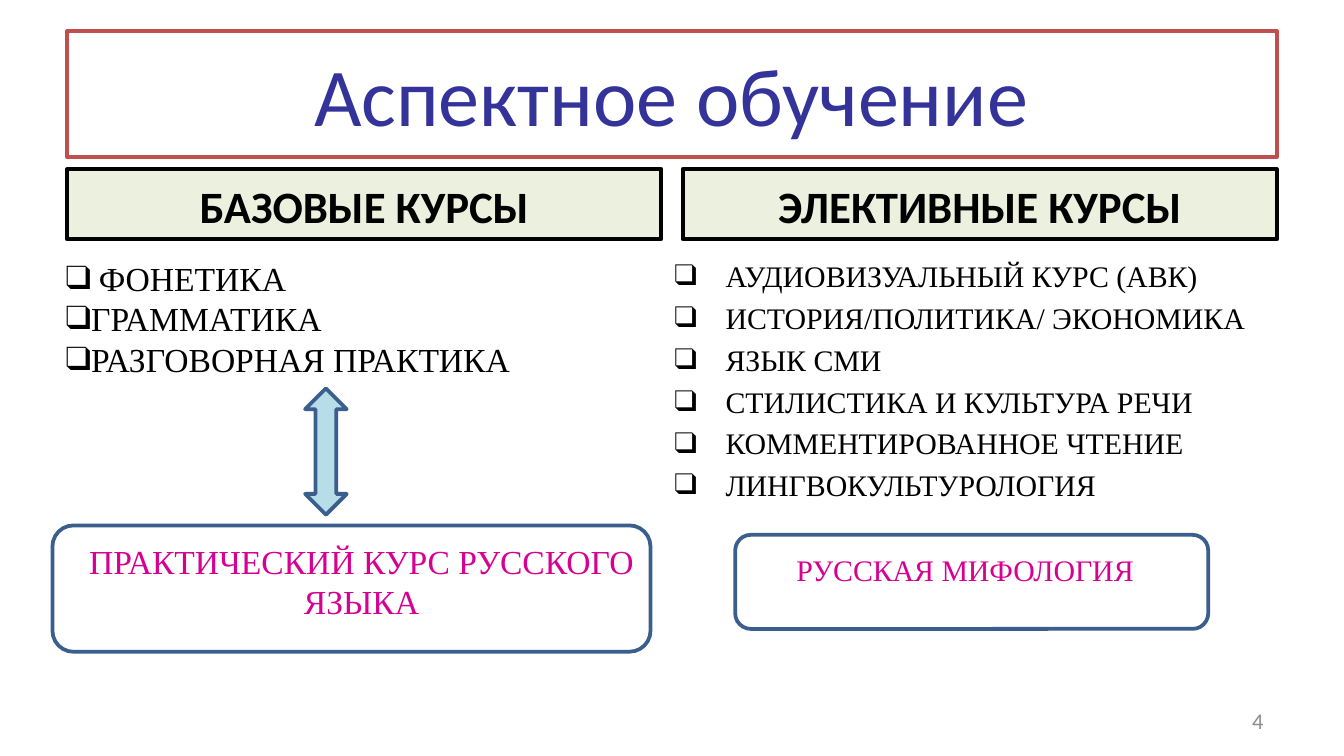
from lxml.etree import SubElement
from pptx import Presentation
from pptx.dml.color import RGBColor
from pptx.enum.shapes import MSO_SHAPE as Shape
from pptx.enum.text import MSO_ANCHOR as Anchor, PP_ALIGN as Align
from pptx.oxml.ns import qn
from pptx.util import Inches, Pt

COLORS = {
    "white": "FFFFFF", "black": "000000", "title": "333399", "title_line": "C0504D",
    "header": "EBF1DE", "arrow": "B7DEE8", "outline": "3A5F8C",
    "accent": "D60093", "number": "8C8C8C",
}
SANS, SERIF = "Calibri", "Times New Roman"

TITLE = "Аспектное обучение"
HEADERS = ["БАЗОВЫЕ КУРСЫ", "ЭЛЕКТИВНЫЕ КУРСЫ"]
BASIC = [[(" ", SANS), ("ФОНЕТИКА", SERIF)],
         [("ГРАММАТИКА", SERIF)],
         [("РАЗГОВОРНАЯ ПРАКТИКА", SERIF)]]
ELECTIVE = [[(name, SERIF)] for name in (
    "АУДИОВИЗУАЛЬНЫЙ КУРС (АВК)", "ИСТОРИЯ/ПОЛИТИКА/ ЭКОНОМИКА", "ЯЗЫК СМИ",
    "СТИЛИСТИКА И КУЛЬТУРА РЕЧИ", "КОММЕНТИРОВАННОЕ ЧТЕНИЕ", "ЛИНГВОКУЛЬТУРОЛОГИЯ")]
LISTS = [
    ((0.39, 1.87, 4.61, 1.0), BASIC, 18, 0, 0),
    ((4.92, 1.87, 4.58, 2.0), ELECTIVE, 16, 0.38, 3.2),
]
RESULTS = [
    ((0.39, 3.91, 4.45, 0.94), "ПРАКТИЧЕСКИЙ КУРС РУССКОГО ЯЗЫКА", 18, (0.2, 0.07, 0.05, 0.05)),
    ((5.47, 3.98, 3.52, 0.7), "РУССКАЯ МИФОЛОГИЯ", 16, (0, 0.09, 0.1, 0.05)),
]
WIDTH = 10
HEIGHT = WIDTH * 9 / 16
MARGIN, COLUMN_WIDTH, COLUMN_STEP = 0.5, 4.42, 4.58


def color(name):
    return RGBColor.from_string(COLORS[name])


def add_box(slide, kind, place, fill, line, width):
    shape = slide.shapes.add_shape(kind, *map(Inches, place))
    shape.shadow.inherit = False
    if fill:
        shape.fill.solid()
        shape.fill.fore_color.rgb = color(fill)
    else:
        shape.fill.background()
    shape.line.color.rgb = color(line)
    shape.line.width = Pt(width)
    return shape


def add_run(paragraph, text, font, size, ink, bold=False):
    run = paragraph.add_run()
    run.text = text
    run.font.name = font
    run.font.size = Pt(size)
    run.font.bold = bold
    run.font.color.rgb = color(ink)


def write(shape, text, font, size, ink, align=Align.CENTER, anchor=Anchor.MIDDLE, bold=False):
    frame = shape.text_frame
    frame.word_wrap = True
    frame.vertical_anchor = anchor
    paragraph = frame.paragraphs[0]
    paragraph.alignment = align
    add_run(paragraph, text, font, size, ink, bold)
    return frame


def add_list(slide, place, items, size, indent, gap):
    frame = slide.shapes.add_textbox(*map(Inches, place)).text_frame
    frame.word_wrap = True
    for index, item in enumerate(items):
        paragraph = frame.add_paragraph() if index else frame.paragraphs[0]
        properties = paragraph._p.get_or_add_pPr()
        properties.set("marL", str(Inches(indent)))
        properties.set("indent", str(-Inches(indent)))
        SubElement(properties, qn("a:buFont")).set("typeface", SERIF)
        SubElement(properties, qn("a:buChar")).set("char", "❑")
        if index:
            paragraph.space_before = Pt(gap)
        for text, font in item:
            add_run(paragraph, text, font, size, "black")


def main():
    presentation = Presentation()
    presentation.slide_width, presentation.slide_height = Inches(WIDTH), Inches(HEIGHT)
    slide = presentation.slides.add_slide(presentation.slide_layouts[6])

    title = add_box(slide, Shape.RECTANGLE, (MARGIN, 0.23, 9, 0.94), "white", "title_line", 2)
    write(title, TITLE, SANS, 44, "title")

    for column, text in enumerate(HEADERS):
        place = (MARGIN + column * COLUMN_STEP, 1.26, COLUMN_WIDTH, 0.52)
        header = add_box(slide, Shape.RECTANGLE, place, "header", "black", 2.25)
        write(header, text, SANS, 24, "black", anchor=Anchor.BOTTOM, bold=True)

    for course_list in LISTS:
        add_list(slide, *course_list)

    add_box(slide, Shape.UP_DOWN_ARROW, (2.27, 2.89, 0.31, 0.94), "arrow", "outline", 2)

    for place, text, size, insets in RESULTS:
        result = add_box(slide, Shape.ROUNDED_RECTANGLE, place, None, "outline", 2)
        frame = write(result, text, SERIF, size, "accent", anchor=Anchor.TOP)
        (frame.margin_left, frame.margin_top,
         frame.margin_right, frame.margin_bottom) = map(Inches, insets)

    number = slide.shapes.add_textbox(*map(Inches, (7.17, 5.21, 2.33, 0.3)))
    write(number, "4", SANS, 12, "number", align=Align.RIGHT)

    presentation.save("out.pptx")


if __name__ == "__main__":
    main()
